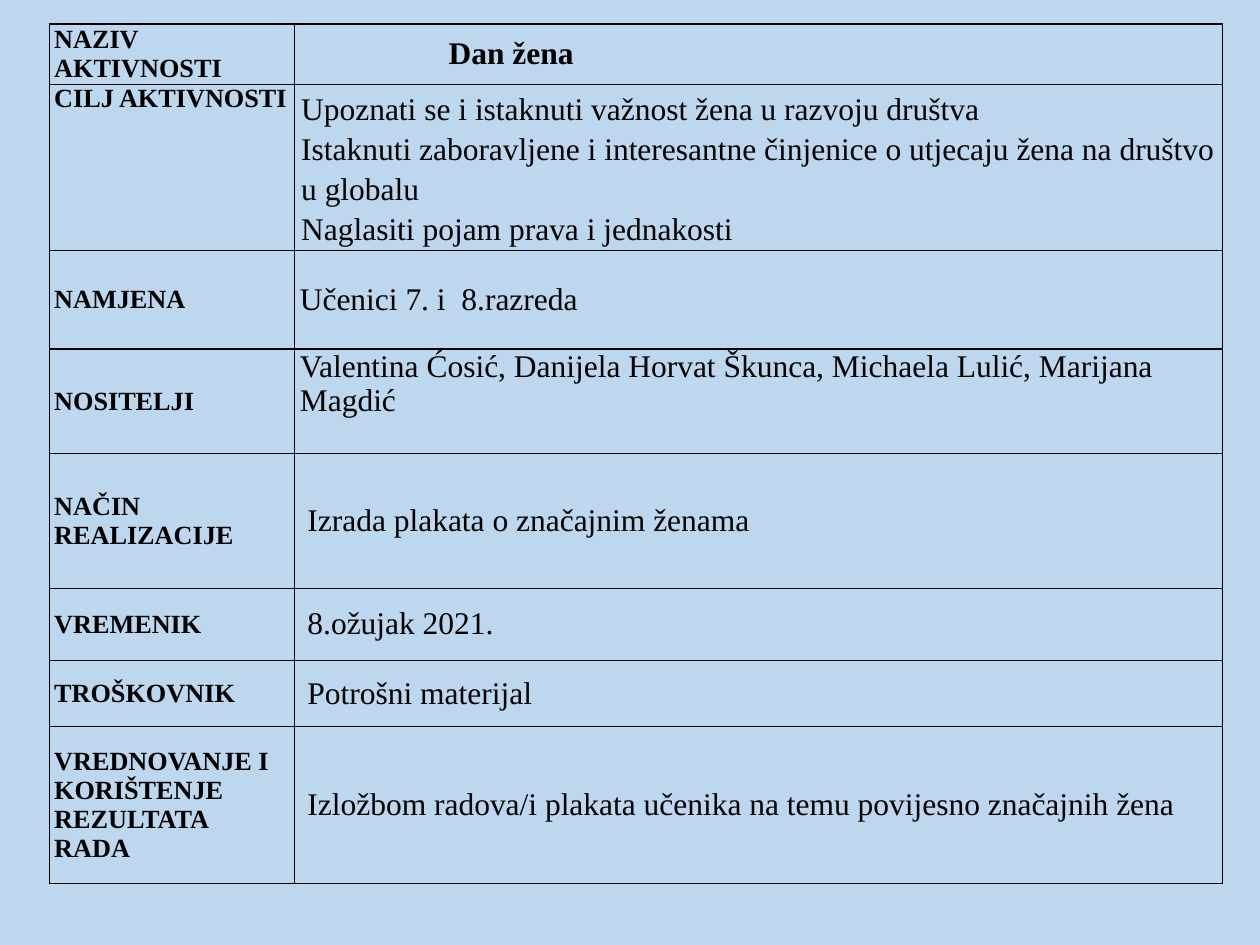
from pptx import Presentation
from pptx.dml.color import RGBColor
from pptx.enum.text import MSO_ANCHOR, PP_ALIGN
from pptx.oxml import parse_xml
from pptx.oxml.ns import nsdecls
from pptx.util import Inches, Pt

MIDDLE, TOP = MSO_ANCHOR.MIDDLE, MSO_ANCHOR.TOP
ROWS = [
    dict(label="NAZIV AKTIVNOSTI", text=["Dan žena"], height=0.48, left=1.22, bold=True),
    dict(label="CILJ AKTIVNOSTI", height=1.32, left=0.05, pad=0.02, spacing=1.15,
         label_anchor=TOP, anchor=TOP, label_align=PP_ALIGN.JUSTIFY,
         text=["Upoznati se i istaknuti važnost žena u razvoju društva",
               "Istaknuti zaboravljene i interesantne činjenice o utjecaju žena na društvo u globalu",
               "Naglasiti pojam prava i jednakosti"]),
    dict(label="NAMJENA", text=["Učenici 7. i  8.razreda"], height=0.78),
    dict(label="NOSITELJI", height=0.83, anchor=TOP,
         text=["Valentina Ćosić, Danijela Horvat Škunca, Michaela Lulić, Marijana Magdić"]),
    dict(label="NAČIN REALIZACIJE", text=["Izrada plakata o značajnim ženama"],
         height=1.07, left=0.1),
    dict(label="VREMENIK", text=["8.ožujak 2021."], height=0.57, left=0.1),
    dict(label="TROŠKOVNIK", text=["Potrošni materijal"], height=0.53, left=0.1),
    dict(label="VREDNOVANJE I KORIŠTENJE REZULTATA RADA", height=1.24, left=0.1,
         text=["Izložbom radova/i plakata učenika na temu povijesno značajnih žena"]),
]
COLS = [1.95, 7.36]
THEME = dict(font="Times New Roman", background="BDD7EE", ink="000000",
             label=15, text=18, border=0.75)


def add_borders(cell):
    tc_pr = cell._tc.get_or_add_tcPr()
    for side in ("lnL", "lnR", "lnT", "lnB"):
        tc_pr.append(parse_xml(
            f'<a:{side} {nsdecls("a")} w="{Pt(THEME["border"])}"><a:solidFill>'
            f'<a:srgbClr val="{THEME["ink"]}"/></a:solidFill></a:{side}>'))


def fill_cell(cell, lines, size, bold, anchor=MIDDLE, left=0.04, right=0.04,
              pad=0, spacing=None, align=None):
    cell.vertical_anchor = anchor
    cell.margin_left, cell.margin_right = Inches(left), Inches(right)
    cell.margin_top = cell.margin_bottom = Inches(pad)
    add_borders(cell)
    cell.fill.background()
    tf = cell.text_frame
    for i, line in enumerate(lines):
        p = tf.add_paragraph() if i else tf.paragraphs[0]
        p.alignment, p.line_spacing = align, spacing
        r = p.add_run()
        r.text = line
        r.font.name, r.font.size, r.font.bold = THEME["font"], Pt(size), bold
        r.font.color.rgb = RGBColor.from_string(THEME["ink"])


def main():
    prs = Presentation()
    prs.slide_width, prs.slide_height = Inches(10), Inches(7.5)
    s = prs.slides.add_slide(prs.slide_layouts[6])
    s.background.fill.solid()
    s.background.fill.fore_color.rgb = RGBColor.from_string(THEME["background"])

    height = sum(row["height"] for row in ROWS)
    table = s.shapes.add_table(len(ROWS), len(COLS), Inches(0.39), Inches(0.19),
                               Inches(sum(COLS)), Inches(height)).table
    table.first_row = table.horz_banding = False
    for col, width in zip(table.columns, COLS):
        col.width = Inches(width)
    for i, row in enumerate(ROWS):
        table.rows[i].height = Inches(row["height"])
        fill_cell(table.cell(i, 0), [row["label"]], THEME["label"], True,
                  anchor=row.get("label_anchor", MIDDLE), align=row.get("label_align"))
        pad = row.get("pad", 0)
        fill_cell(table.cell(i, 1), row["text"], THEME["text"], row.get("bold", False),
                  anchor=row.get("anchor", MIDDLE), left=row.get("left", 0.04),
                  right=0.05 if pad else 0.04, pad=pad, spacing=row.get("spacing"))
    prs.save("out.pptx")


if __name__ == "__main__":
    main()
